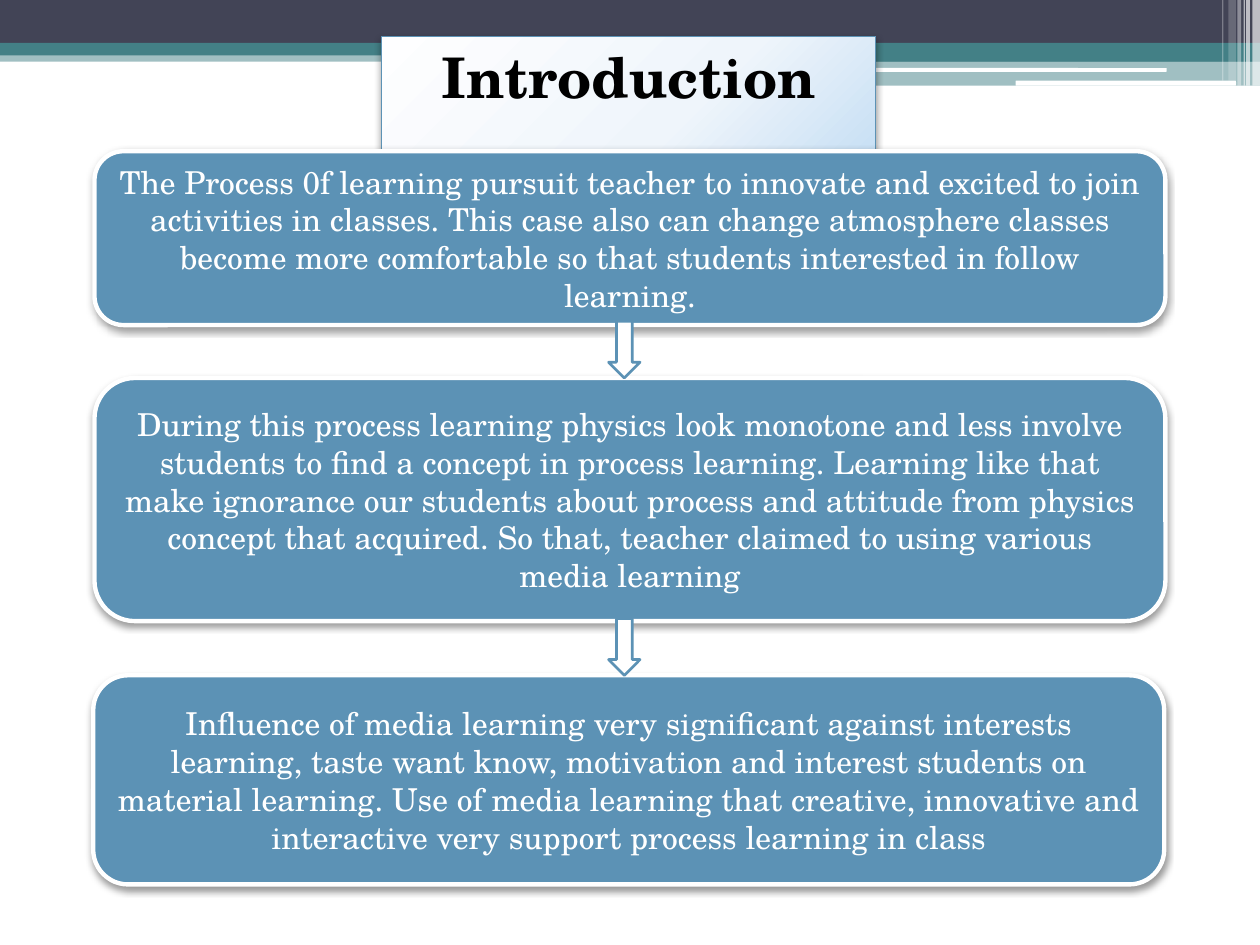
from lxml import etree
from pptx import Presentation
from pptx.dml.color import RGBColor
from pptx.enum.shapes import MSO_SHAPE
from pptx.enum.text import MSO_ANCHOR, MSO_AUTO_SIZE, PP_ALIGN
from pptx.oxml import parse_xml
from pptx.oxml.ns import qn
from pptx.util import Pt

RECTANGLE = MSO_SHAPE.RECTANGLE
ROUNDED = MSO_SHAPE.ROUNDED_RECTANGLE
ARROW = MSO_SHAPE.RIGHT_ARROW
CENTER = PP_ALIGN.CENTER
TOP, MIDDLE = MSO_ANCHOR.TOP, MSO_ANCHOR.MIDDLE
NAMESPACE = "http://schemas.openxmlformats.org/drawingml/2006/main"
PX = 9144
TITLE_ONLY = 5

THEME = {
    "font": "TeX Gyre Schola",
    "title_size": 32,
    "body_size": 18,
    "navy": "424456",
    "teal": "438086",
    "blue": "5C92B5",
    "white": "FFFFFF",
    "black": "000000",
    "title_gradient": [(0, "FEFEFF"), (55, "EFF5FB"), (100, "BAD8F2")],
}

TITLE = "Introduction"
TITLE_BOX = (303, 29, 392, 64)

STEPS = [
    ((75, 120, 850, 138),
     "The Process 0f learning pursuit teacher to innovate and excited to join "
     "activities in classes. This case also can change atmosphere classes become "
     "more comfortable so that students interested in follow learning."),
    ((75, 300, 850, 193),
     "During this process learning physics look monotone and less involve students "
     "to find a concept in process learning. Learning like that make ignorance our "
     "students about process and attitude from physics concept that acquired. "
     "So that, teacher claimed to using various media learning"),
    ((74, 536, 850, 166),
     "Influence of media learning very significant against interests learning, "
     "taste want know, motivation and interest students on material learning. Use of "
     "media learning that creative, innovative and interactive very support process "
     "learning in class"),
]

HEADER_BARS = [
    (RECTANGLE, (0, 40, 1000, 9), "teal", 50),
    (RECTANGLE, (0, 0, 1000, 34), "navy", 100),
    (RECTANGLE, (0, 34, 1000, 10), "teal", 100),
    (RECTANGLE, (592, 39, 408, 10), "teal", 100),
    (RECTANGLE, (592, 48, 408, 20), "teal", 50),
    (ROUNDED, (591, 54, 335, 3), "white", 100),
    (ROUNDED, (806, 64, 175, 4), "white", 100),
]
CORNER_STRIPES = [
    (994, 6, 68, 65), (989, 3, 68, 65), (987, 1, 68, 60),
    (982, 3, 68, 40), (975, 6, 64, 20), (970, 1, 64, 30),
]
ARROW_LEFT, ARROW_LENGTH, ARROW_THICKNESS = 473, 45, 25


def color(name):
    return RGBColor.from_string(THEME[name])


def add_block(page, kind, box, fill, alpha=100):
    shape = page.shapes.add_shape(kind, *(value * PX for value in box))
    shape.shadow.inherit = False
    shape.fill.solid()
    shape.fill.fore_color.rgb = color(fill)
    shape.line.fill.background()
    if alpha < 100:
        shade = shape.fill._xPr.find(qn("a:solidFill")).find(qn("a:srgbClr"))
        etree.SubElement(shade, qn("a:alpha"), val=str(alpha * 1000))
    return shape


def set_line(shape, name, width):
    shape.line.color.rgb = color(name)
    shape.line.width = Pt(width)


def set_shadow(shape):
    properties = shape._element.spPr
    for effects in properties.findall(qn("a:effectLst")):
        properties.remove(effects)
    properties.append(parse_xml(
        f'<a:effectLst xmlns:a="{NAMESPACE}">'
        '<a:outerShdw blurRad="52070" dist="25400" dir="5400000" rotWithShape="0">'
        f'<a:srgbClr val="{THEME["black"]}"><a:alpha val="40000"/></a:srgbClr>'
        '</a:outerShdw></a:effectLst>'))


def set_title_gradient(shape):
    stops = "".join(
        f'<a:gs pos="{place * 1000}"><a:srgbClr val="{shade}"/></a:gs>'
        for place, shade in THEME["title_gradient"])
    geometry = shape._element.spPr.find(qn("a:prstGeom"))
    if geometry is None:
        geometry = parse_xml(
            f'<a:prstGeom xmlns:a="{NAMESPACE}" prst="rect"><a:avLst/></a:prstGeom>')
        shape._element.spPr.find(qn("a:xfrm")).addnext(geometry)
    geometry.addnext(parse_xml(
        f'<a:gradFill xmlns:a="{NAMESPACE}" rotWithShape="1"><a:gsLst>{stops}</a:gsLst>'
        '<a:path path="circle">'
        '<a:fillToRect l="-40000" t="-90000" r="140000" b="190000"/>'
        '</a:path></a:gradFill>'))


def write(shape, text, size, shade, anchor, bold=False):
    frame = shape.text_frame
    frame.text = text
    frame.word_wrap = True
    frame.vertical_anchor = anchor
    paragraph = frame.paragraphs[0]
    paragraph.alignment = CENTER
    font = paragraph.runs[0].font
    font.name = THEME["font"]
    font.size = Pt(THEME[size])
    font.bold = bold
    font.color.rgb = color(shade)


def add_header(page):
    for kind, box, fill, alpha in HEADER_BARS:
        add_block(page, kind, box, fill, alpha)
    for left, width, height, alpha in CORNER_STRIPES:
        add_block(page, RECTANGLE, (left, 0, width, height), "white", alpha)


def add_title(page):
    title = page.shapes.title
    title.left, title.top, title.width, title.height = (
        value * PX for value in TITLE_BOX)
    set_title_gradient(title)
    set_line(title, "blue", 0.75)
    set_shadow(title)
    write(title, TITLE, "title_size", "black", TOP, bold=True)
    title.text_frame.auto_size = MSO_AUTO_SIZE.SHAPE_TO_FIT_TEXT
    page.shapes._spTree.append(title._element)


def add_steps(page):
    for box, text in STEPS:
        step = add_block(page, ROUNDED, box, "blue")
        set_line(step, "white", 2.5)
        set_shadow(step)
        write(step, text, "body_size", "white", MIDDLE)
    for box, text in STEPS[1:]:
        center = box[1] - ARROW_LENGTH // 2
        top = center - ARROW_THICKNESS // 2 - 1
        arrow = add_block(
            page, ARROW, (ARROW_LEFT, top, ARROW_LENGTH, ARROW_THICKNESS), "white")
        arrow.rotation = 90
        set_line(arrow, "blue", 1.5)


def main():
    deck = Presentation()
    deck.slide_width, deck.slide_height = 1000 * PX, 750 * PX
    page = deck.slides.add_slide(deck.slide_layouts[TITLE_ONLY])
    add_header(page)
    add_title(page)
    add_steps(page)
    deck.save("out.pptx")


if __name__ == "__main__":
    main()
